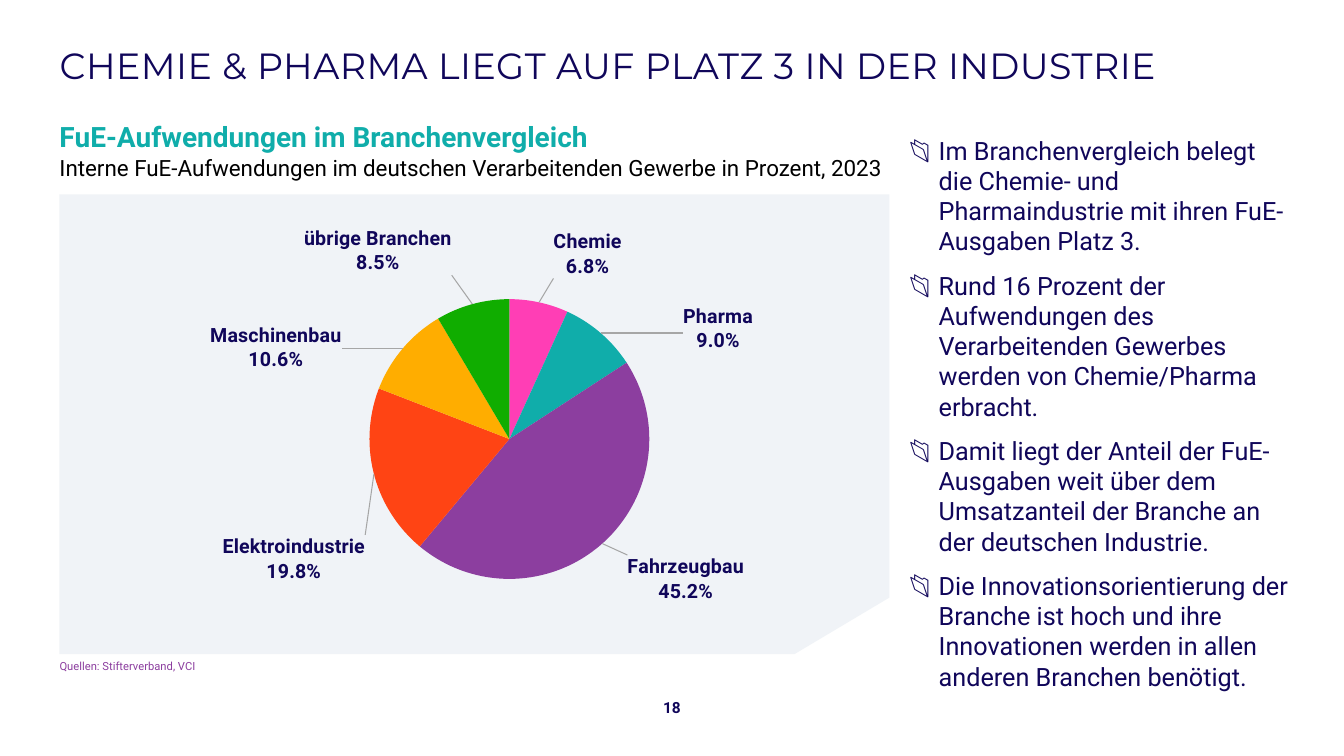
from dataclasses import dataclass

from lxml.etree import SubElement
from pptx import Presentation
from pptx.chart.data import CategoryChartData
from pptx.dml.color import RGBColor
from pptx.enum.chart import XL_CHART_TYPE, XL_LABEL_POSITION
from pptx.enum.text import MSO_ANCHOR, PP_ALIGN
from pptx.oxml import parse_xml
from pptx.oxml.ns import nsdecls, qn
from pptx.slide import Slide
from pptx.text.text import TextFrame
from pptx.util import Inches, Pt

NAVY = RGBColor(0x10, 0x06, 0x5A)
TEAL = RGBColor(0x10, 0xAD, 0xAA)
PURPLE = RGBColor(0x8C, 0x3E, 0x9F)
PINK = RGBColor(0xFF, 0x3E, 0xB5)
ORANGE = RGBColor(0xFF, 0x44, 0x14)
AMBER = RGBColor(0xFF, 0xAD, 0x00)
GREEN = RGBColor(0x10, 0xAD, 0x00)
BLACK = RGBColor(0, 0, 0)
PANEL = RGBColor(0xF0, 0xF3, 0xF7)
BODY_FONT = "Roboto"
LEFT = 0.59
WIDTH = 12.2


@dataclass
class Slice:
    """A pie slice; dx and dy move its label, in inches."""
    name: str
    value: float
    color: RGBColor
    dx: float
    dy: float


@dataclass
class Label:
    text: str
    box: tuple[float, float, float, float]
    size: float
    color: RGBColor
    bold: bool = False
    align: PP_ALIGN = PP_ALIGN.LEFT
    anchor: MSO_ANCHOR = MSO_ANCHOR.TOP


SLICES = [
    Slice("Chemie", 6.8, PINK, 0.13, -0.18),
    Slice("Pharma", 9, TEAL, 0.78, 0.24),
    Slice("Fahrzeugbau", 45.2, PURPLE, 0.21, 0.07),
    Slice("Elektroindustrie", 19.8, ORANGE, -0.03, 0.59),
    Slice("Maschinenbau", 10.6, AMBER, -0.56, 0.27),
    Slice("übrige Branchen", 8.5, GREEN, -0.19, -0.23),
]
LABELS = [
    Label("FuE-Aufwendungen im Branchenvergleich",
          (LEFT, 1.19, WIDTH, 0.31), 20, TEAL, bold=True),
    Label("Interne FuE-Aufwendungen im deutschen Verarbeitenden Gewerbe in Prozent, 2023",
          (LEFT, 1.53, WIDTH, 0.28), 16, BLACK),
    Label("Quellen: Stifterverband, VCI", (LEFT, 6.54, 11.02, 0.13), 8, PURPLE),
    Label("18", (6.37, 6.88, 0.59, 0.28), 11, NAVY, bold=True,
          align=PP_ALIGN.CENTER, anchor=MSO_ANCHOR.MIDDLE),
]
POINTS = [
    "Im Branchenvergleich belegt die Chemie- und Pharmaindustrie mit ihren "
    "FuE-Ausgaben Platz 3.",
    "Rund 16 Prozent der Aufwendungen des Verarbeitenden Gewerbes werden von "
    "Chemie/Pharma erbracht.",
    "Damit liegt der Anteil der FuE-Ausgaben weit über dem Umsatzanteil der "
    "Branche an der deutschen Industrie.",
    "Die Innovationsorientierung der Branche ist hoch und ihre Innovationen "
    "werden in allen anderen Branchen benötigt.",
]


def write(tf: TextFrame, texts: list[str], *, size: float, color: RGBColor,
          font: str = BODY_FONT, bold: bool = False, spacing: float = 0,
          align: PP_ALIGN = PP_ALIGN.LEFT, anchor: MSO_ANCHOR = MSO_ANCHOR.TOP,
          bullet: str = "", tracking: int = 0) -> None:
    """Fill a frame with one paragraph per text; tracking is in 1/100 pt."""
    tf.word_wrap = True
    tf.vertical_anchor = anchor
    tf.margin_left = tf.margin_right = tf.margin_top = tf.margin_bottom = 0
    for i, text in enumerate(texts):
        p = tf.add_paragraph() if i else tf.paragraphs[0]
        p.alignment = align
        if i:
            p.space_before = Pt(spacing)
        if bullet:
            add_bullet(p, bullet, color)
        r = p.add_run()
        r.text = text
        r.font.name, r.font.size, r.font.bold = font, Pt(size), bold
        r.font.color.rgb = color
        if tracking:
            r.font._element.set("spc", str(tracking))


def add_bullet(p, char: str, color: RGBColor) -> None:
    pPr = p._p.get_or_add_pPr()
    indent = Inches(0.29)
    pPr.set("marL", str(indent))
    pPr.set("indent", str(-indent))
    SubElement(SubElement(pPr, qn("a:buClr")), qn("a:srgbClr"), val=str(color))
    SubElement(pPr, qn("a:buFont"), typeface=BODY_FONT)
    SubElement(pPr, qn("a:buChar"), char=char)


def add_label(s: Slide, label: Label) -> None:
    sp = s.shapes.add_textbox(*map(Inches, label.box))
    write(sp.text_frame, [label.text], size=label.size, color=label.color,
          bold=label.bold, align=label.align, anchor=label.anchor)


def add_panel(s: Slide) -> None:
    """Draw the chart background with its cut lower right corner."""
    outline = [(8.82, 1.93), (8.82, 5.93), (7.88, 6.49), (LEFT, 6.49)]
    fb = s.shapes.build_freeform(Inches(LEFT), Inches(1.93))
    fb.add_line_segments([(Inches(x), Inches(y)) for x, y in outline])
    sp = fb.convert_to_shape()
    sp.shadow.inherit = False
    sp.fill.solid()
    sp.fill.fore_color.rgb = PANEL
    sp.line.fill.background()


def layout_xml(x: float, y: float, size: str = "", modes: str = ""):
    return parse_xml(
        f'<c:layout {nsdecls("c")}><c:manualLayout>{modes}'
        f'<c:x val="{x:.4f}"/><c:y val="{y:.4f}"/>{size}'
        '</c:manualLayout></c:layout>')


def add_pie(s: Slide) -> None:
    width, height = 7.95, 4.29
    data = CategoryChartData()
    data.categories = [item.name for item in SLICES]
    data.add_series("Series 1", [item.value for item in SLICES])
    chart = s.shapes.add_chart(XL_CHART_TYPE.PIE, Inches(0.68), Inches(2.05),
                               Inches(width), Inches(height), data).chart
    chart.has_title = chart.has_legend = False
    chart.font.name, chart.font.size, chart.font.bold = BODY_FONT, Pt(14), True
    chart.font.color.rgb = NAVY
    plot = chart.plots[0]
    plot.vary_by_categories = True
    area = chart._chartSpace.chart.plotArea
    for old in area.findall(qn("c:layout")):
        area.remove(old)
    modes = ('<c:layoutTarget val="inner"/><c:xMode val="edge"/>'
             '<c:yMode val="edge"/>')
    area.insert(0, layout_xml(0.3, 0.214, '<c:w val="0.5"/><c:h val="0.647"/>', modes))

    series = plot.series[0]
    labels = series.data_labels
    labels.show_percentage = labels.show_category_name = True
    labels.show_value = False
    labels.number_format, labels.number_format_is_linked = "0.0%", False
    labels.position = XL_LABEL_POSITION.OUTSIDE_END
    font = labels.font
    font.name, font.size, font.bold = BODY_FONT, Pt(14), True
    font.color.rgb = NAVY
    dLbls = labels._element
    for tag in ("c:showLeaderLines", "c:separator"):
        for old in dLbls.findall(qn(tag)):
            dLbls.remove(old)
    SubElement(dLbls, qn("c:separator")).text = "\n"
    SubElement(dLbls, qn("c:showLeaderLines"), val="1")
    dLbls.append(parse_xml(
        f'<c:leaderLines {nsdecls("c", "a")}><c:spPr><a:ln w="9525"><a:solidFill>'
        '<a:srgbClr val="A6A6A6"/></a:solidFill></a:ln></c:spPr></c:leaderLines>'))

    for i, item in enumerate(SLICES):
        fill = series.points[i].format.fill
        fill.solid()
        fill.fore_color.rgb = item.color
        flags = "".join(f'<c:{name} val="{int(name in ("showCatName", "showPercent"))}"/>'
                        for name in ("showLegendKey", "showVal", "showCatName",
                                     "showSerName", "showPercent", "showBubbleSize"))
        dLbl = parse_xml(
            f'<c:dLbl {nsdecls("c")}><c:idx val="{i}"/>'
            '<c:numFmt formatCode="0.0%" sourceLinked="0"/>'
            f'<c:dLblPos val="outEnd"/>{flags}<c:separator>\n</c:separator></c:dLbl>')
        dLbl.insert(1, layout_xml(item.dx / width, item.dy / height))
        dLbls.insert(i, dLbl)


def main() -> None:
    prs = Presentation()
    prs.slide_width, prs.slide_height = Inches(13.33), Inches(7.5)
    s = prs.slides.add_slide(prs.slide_layouts[5])
    title = s.shapes.title
    title.left, title.top = Inches(LEFT), Inches(0.15)
    title.width, title.height = Inches(WIDTH), Inches(0.98)
    write(title.text_frame, ["CHEMIE & PHARMA LIEGT AUF PLATZ 3 IN DER INDUSTRIE"],
          size=26, color=NAVY, font="Montserrat", anchor=MSO_ANCHOR.MIDDLE, tracking=30)
    add_panel(s)
    for label in LABELS:
        add_label(s, label)
    sp = s.shapes.add_textbox(Inches(9.02), Inches(1.34), Inches(3.78), Inches(5))
    write(sp.text_frame, POINTS, size=18, color=NAVY, spacing=10, bullet="📂")
    add_pie(s)
    prs.save("out.pptx")


if __name__ == "__main__":
    main()
